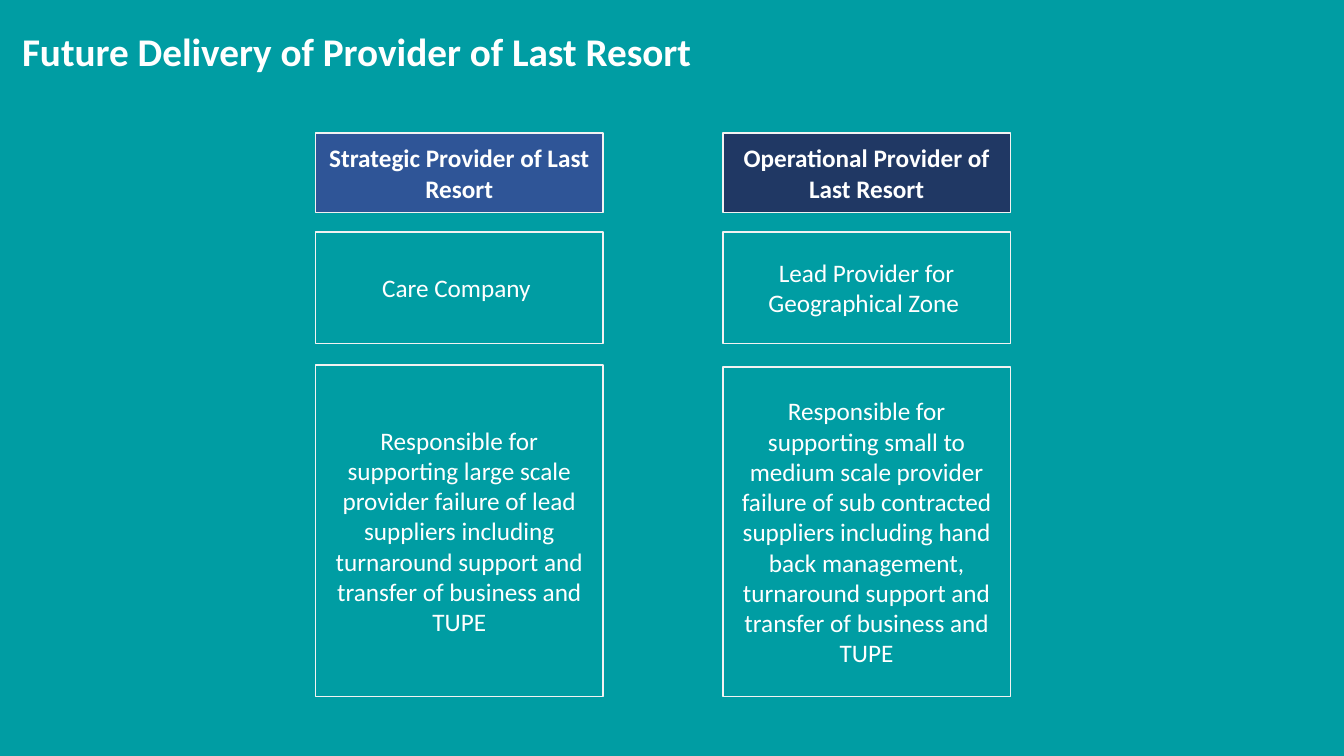
from dataclasses import dataclass

from pptx import Presentation
from pptx.dml.color import RGBColor
from pptx.enum.shapes import MSO_SHAPE
from pptx.enum.text import MSO_ANCHOR, PP_ALIGN
from pptx.shapes.autoshape import Shape
from pptx.slide import Slide
from pptx.util import Inches, Pt

RECTANGLE = MSO_SHAPE.RECTANGLE
MIDDLE = MSO_ANCHOR.MIDDLE
LEFT = PP_ALIGN.LEFT
CENTER = PP_ALIGN.CENTER


@dataclass(frozen=True)
class Theme:
    font: str = "Calibri"
    title_size: int = 28
    body_size: int = 18
    outline_width: float = 1
    background: str = "009DA3"
    text: str = "FFFFFF"
    outline: str = "F2F2F2"
    strategic: str = "2F5597"
    operational: str = "203864"


@dataclass(frozen=True)
class ProviderColumn:
    left: float
    header_fill: str
    header: str
    provider: str
    duties: str
    duties_top: float


THEME = Theme()
SLIDE_WIDTH, SLIDE_HEIGHT = 13.33, 7.5
BOX_WIDTH = 2.85
HEADER_TOP, HEADER_HEIGHT = 1.32, 0.79
PROVIDER_TOP, PROVIDER_HEIGHT = 2.3, 1.11
COLUMN_BOTTOM = 6.91

COLUMNS = (
    ProviderColumn(
        left=3.13,
        header_fill=THEME.strategic,
        header="Strategic Provider of Last Resort",
        provider="Care Company ",
        duties="Responsible for supporting large scale provider failure of lead "
        "suppliers including turnaround support and transfer of business and TUPE",
        duties_top=3.62,
    ),
    ProviderColumn(
        left=7.17,
        header_fill=THEME.operational,
        header="Operational Provider of Last Resort",
        provider="Lead Provider for Geographical Zone ",
        duties="Responsible for supporting small to medium scale provider failure "
        "of sub contracted suppliers including hand back management, "
        "turnaround support and transfer of business and TUPE",
        duties_top=3.64,
    ),
)


def write_text(shape: Shape, text: str, size: int, bold: bool, alignment: PP_ALIGN) -> None:
    text_frame = shape.text_frame
    text_frame.text = text
    text_frame.word_wrap = True
    text_frame.vertical_anchor = MIDDLE
    paragraph = text_frame.paragraphs[0]
    paragraph.alignment = alignment
    font = paragraph.runs[0].font
    font.name = THEME.font
    font.size = Pt(size)
    font.bold = bold
    font.color.rgb = RGBColor.from_string(THEME.text)


def add_rectangle(slide: Slide, left: float, top: float, width: float, height: float,
                  fill: str | None = None) -> Shape:
    shape = slide.shapes.add_shape(
        RECTANGLE, Inches(left), Inches(top), Inches(width), Inches(height))
    shape.shadow.inherit = False
    if fill is None:
        shape.fill.background()
    else:
        shape.fill.solid()
        shape.fill.fore_color.rgb = RGBColor.from_string(fill)
    return shape


def add_box(slide: Slide, left: float, top: float, height: float, text: str,
            fill: str | None = None, bold: bool = False) -> None:
    box = add_rectangle(slide, left, top, BOX_WIDTH, height, fill)
    box.line.color.rgb = RGBColor.from_string(THEME.outline)
    box.line.width = Pt(THEME.outline_width)
    write_text(box, text, THEME.body_size, bold, CENTER)


def add_column(slide: Slide, column: ProviderColumn) -> None:
    add_box(slide, column.left, HEADER_TOP, HEADER_HEIGHT, column.header,
            column.header_fill, bold=True)
    add_box(slide, column.left, PROVIDER_TOP, PROVIDER_HEIGHT, column.provider)
    add_box(slide, column.left, column.duties_top, COLUMN_BOTTOM - column.duties_top,
            column.duties)


def main() -> None:
    presentation = Presentation()
    presentation.slide_width = Inches(SLIDE_WIDTH)
    presentation.slide_height = Inches(SLIDE_HEIGHT)
    slide = presentation.slides.add_slide(presentation.slide_layouts[6])

    # Full-slide colour panel
    panel = add_rectangle(slide, 0, 0, SLIDE_WIDTH, SLIDE_HEIGHT, THEME.background)
    panel.line.fill.background()

    # Title
    title = slide.shapes.add_textbox(Inches(0.12), Inches(0.24), Inches(11.79), Inches(0.59))
    write_text(title, "Future Delivery of Provider of Last Resort",
               THEME.title_size, True, LEFT)
    title.text_frame.paragraphs[0].line_spacing = 0.9

    # Provider columns
    for column in COLUMNS:
        add_column(slide, column)

    presentation.save("out.pptx")


if __name__ == "__main__":
    main()
